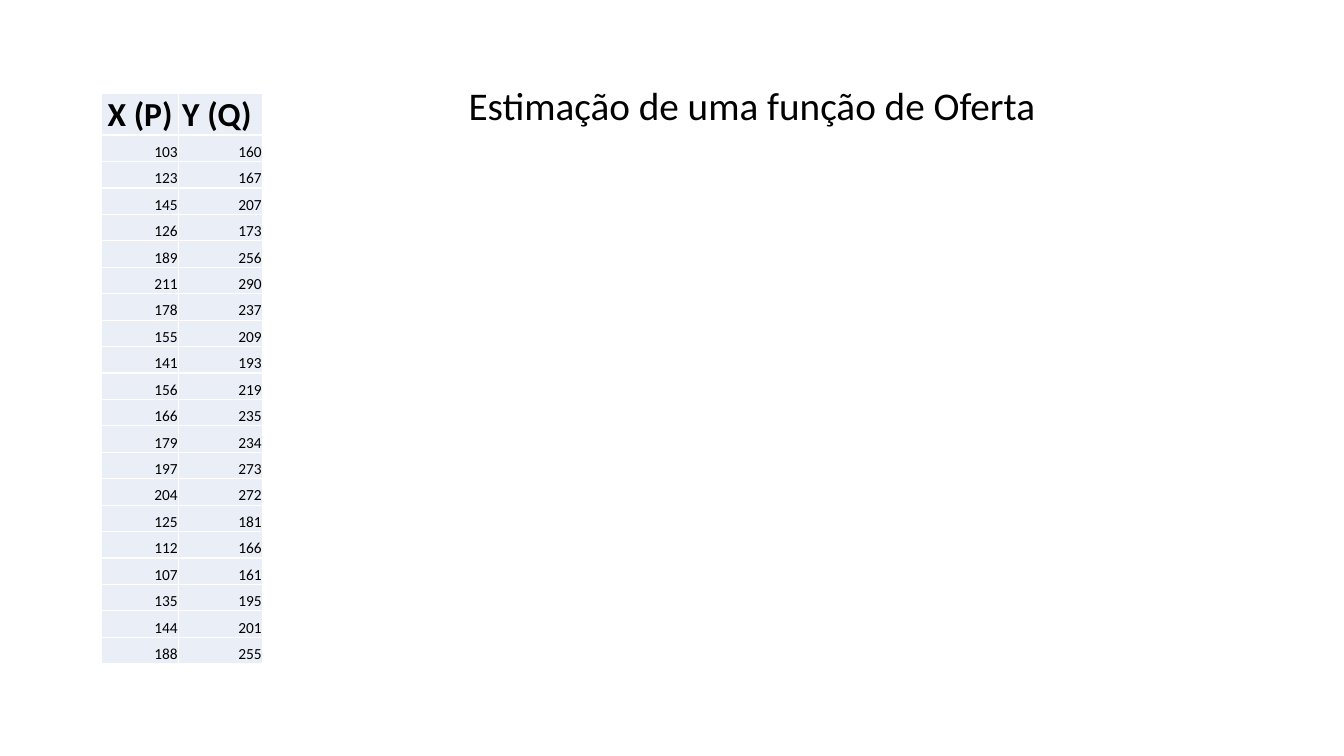
from lxml import etree
from pptx import Presentation
from pptx.dml.color import RGBColor
from pptx.enum.text import MSO_ANCHOR, MSO_AUTO_SIZE, PP_ALIGN
from pptx.oxml.ns import qn
from pptx.util import Pt

CENTER, RIGHT, LEFT = PP_ALIGN.CENTER, PP_ALIGN.RIGHT, PP_ALIGN.LEFT
BOTTOM = MSO_ANCHOR.BOTTOM
GROW = MSO_AUTO_SIZE.SHAPE_TO_FIT_TEXT

COLORS = {"text": "000000", "cell": "EAEFF7", "border": "FFFFFF"}
FONT = "Calibri"

HEADERS = ["X (P)", "Y (Q) "]
PRICES = [103, 123, 145, 126, 189, 211, 178, 155, 141, 156,
          166, 179, 197, 204, 125, 112, 107, 135, 144, 188]
QUANTITIES = [160, 167, 207, 173, 256, 290, 237, 209, 193, 219,
              235, 234, 273, 272, 181, 166, 161, 195, 201, 255]


class SlideBuilder:
    def __init__(self, slide):
        self.s = slide

    def run(self, p, text, size, bold=False, align=LEFT):
        p.alignment = align
        r = p.add_run()
        r.text = text
        r.font.name = FONT
        r.font.size = Pt(size)
        r.font.bold = bold
        r.font.color.rgb = RGBColor.from_string(COLORS["text"])

    def text(self, x, y, w, h, text, size):
        sp = self.s.shapes.add_textbox(Pt(x), Pt(y), Pt(w), Pt(h))
        tf = sp.text_frame
        tf.word_wrap = False
        tf.auto_size = GROW
        self.run(tf.paragraphs[0], text, size)

    def borders(self, cell):
        tc_pr = cell._tc.get_or_add_tcPr()
        for i, side in enumerate(("lnL", "lnR", "lnT", "lnB")):
            ln = etree.Element(qn(f"a:{side}"), w=str(Pt(1)))
            fill = etree.SubElement(ln, qn("a:solidFill"))
            etree.SubElement(fill, qn("a:srgbClr"), val=COLORS["border"])
            tc_pr.insert(i, ln)

    def cell(self, cell, text, size, bold, align):
        cell.fill.solid()
        cell.fill.fore_color.rgb = RGBColor.from_string(COLORS["cell"])
        cell.vertical_anchor = BOTTOM
        cell.margin_left = cell.margin_right = cell.margin_top = Pt(0.7)
        cell.margin_bottom = Pt(0)
        self.run(cell.text_frame.paragraphs[0], text, size, bold, align)
        self.borders(cell)

    def table(self, x, y, widths, header_h, row_h, headers, rows):
        height = header_h + row_h * len(rows)
        table = self.s.shapes.add_table(
            len(rows) + 1, len(widths), Pt(x), Pt(y), Pt(sum(widths)), Pt(height)).table
        for column, width in zip(table.columns, widths):
            column.width = Pt(width)
        for i, values in enumerate([headers, *rows]):
            is_header = i == 0
            table.rows[i].height = Pt(header_h if is_header else row_h)
            size, align = (24, CENTER) if is_header else (11, RIGHT)
            for j, value in enumerate(values):
                self.cell(table.cell(i, j), str(value), size, is_header, align)


def main():
    prs = Presentation()
    prs.slide_width, prs.slide_height = Pt(960), Pt(540)
    slide = SlideBuilder(prs.slides.add_slide(prs.slide_layouts[6]))

    # Price and quantity data
    slide.table(72.5, 66.5, [55.2, 60], 30, 18.9, HEADERS,
                list(zip(PRICES, QUANTITIES)))

    # Title
    slide.text(327.6, 54.7, 424, 41, "Estimação de uma função de Oferta", 28)

    prs.save("out.pptx")


if __name__ == "__main__":
    main()
